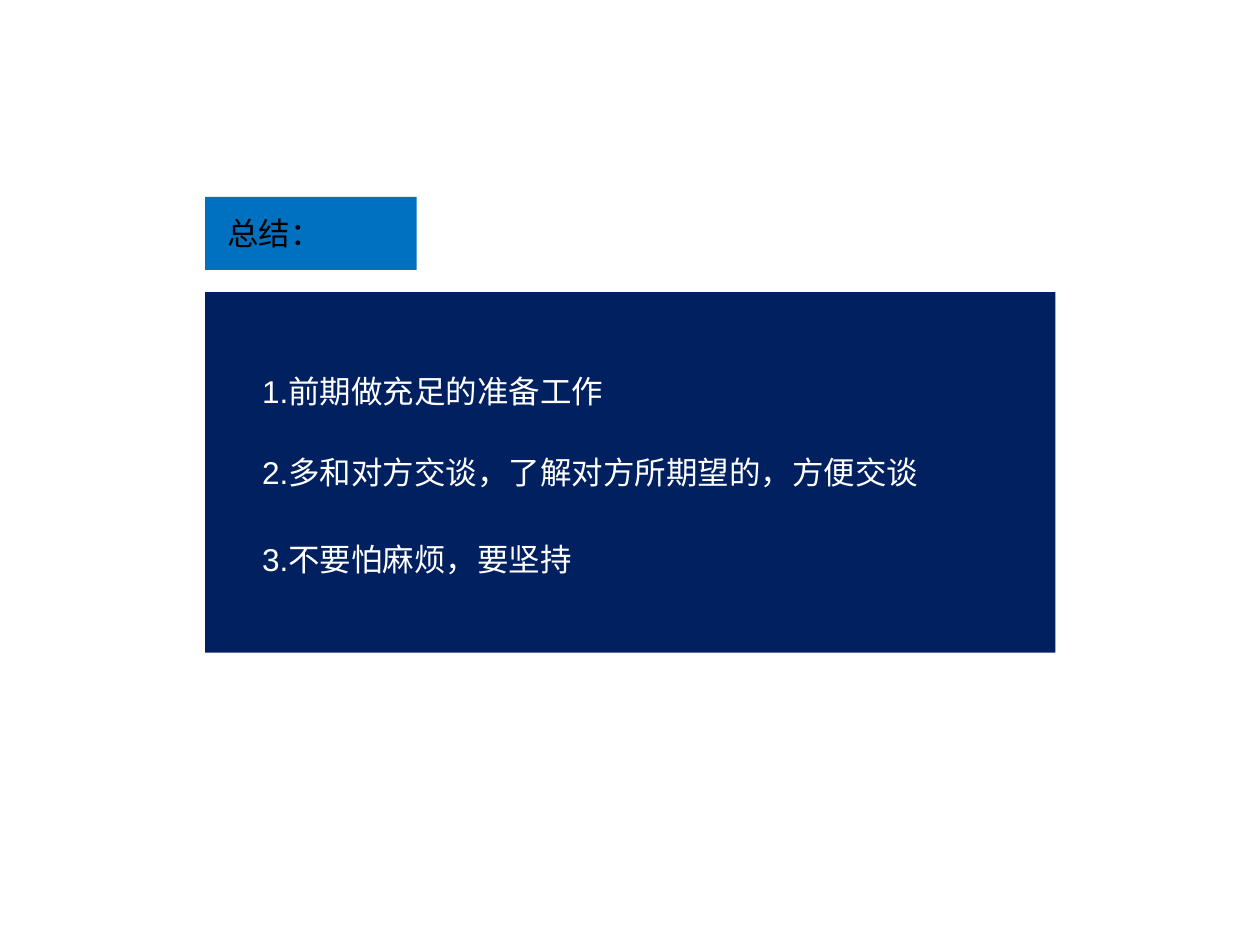
from dataclasses import dataclass

from pptx import Presentation
from pptx.dml.color import RGBColor
from pptx.enum import shapes, text
from pptx.util import Inches, Pt


@dataclass(frozen=True)
class Theme:
    navy: str = "002060"
    blue: str = "0070C0"
    black: str = "000000"
    white: str = "FFFFFF"
    font: str = "Arial"
    size: int = 18


THEME = Theme()
WIDE, HIGH = 10, 7.5
COL, ROW = WIDE / 100, HIGH / 100
LINE = 5.33 * ROW
POINTS = (
    ("1.前期做充足的准备工作", 7.73, 29.1),
    ("2.多和对方交谈，了解对方所期望的，方便交谈", 16.4, 54.1),
    ("3.不要怕麻烦，要坚持", 25.6, 26.6),
)


def grid(left, top, width, height):
    return left * COL, top * ROW, width * COL, height * ROW


def panel(slide, box, color):
    rect = slide.shapes.add_shape(
        shapes.MSO_SHAPE.RECTANGLE, *map(Inches, box))
    rect.shadow.inherit = False
    rect.fill.solid()
    rect.fill.fore_color.rgb = RGBColor.from_string(color)
    rect.line.fill.background()


def label(slide, box, words, color):
    frame = slide.shapes.add_textbox(*map(Inches, box)).text_frame
    frame.word_wrap = True
    frame.auto_size = text.MSO_AUTO_SIZE.SHAPE_TO_FIT_TEXT
    run = frame.paragraphs[0].add_run()
    run.text = words
    run.font.name = THEME.font
    run.font.size = Pt(THEME.size)
    run.font.color.rgb = RGBColor.from_string(color)


def header(slide, box):
    left, top, width, height = box
    panel(slide, box, THEME.blue)
    spot = (left + 0.8 * COL, top + (height - LINE) / 2, 9.5 * COL, LINE)
    label(slide, spot, "总结：", THEME.black)


def summary(slide, box):
    left, top, width, height = box
    panel(slide, box, THEME.navy)
    for words, down, span in POINTS:
        spot = (left + 3.55 * COL, top + down * ROW, span * COL, LINE)
        label(slide, spot, words, THEME.white)


def main():
    deck = Presentation()
    deck.slide_width, deck.slide_height = Inches(WIDE), Inches(HIGH)
    slide = deck.slides.add_slide(deck.slide_layouts[6])
    summary(slide, grid(16.27, 30.93, 67.5, 38.13))
    header(slide, grid(16.27, 20.83, 16.8, 7.73))
    deck.save("out.pptx")


if __name__ == "__main__":
    main()
